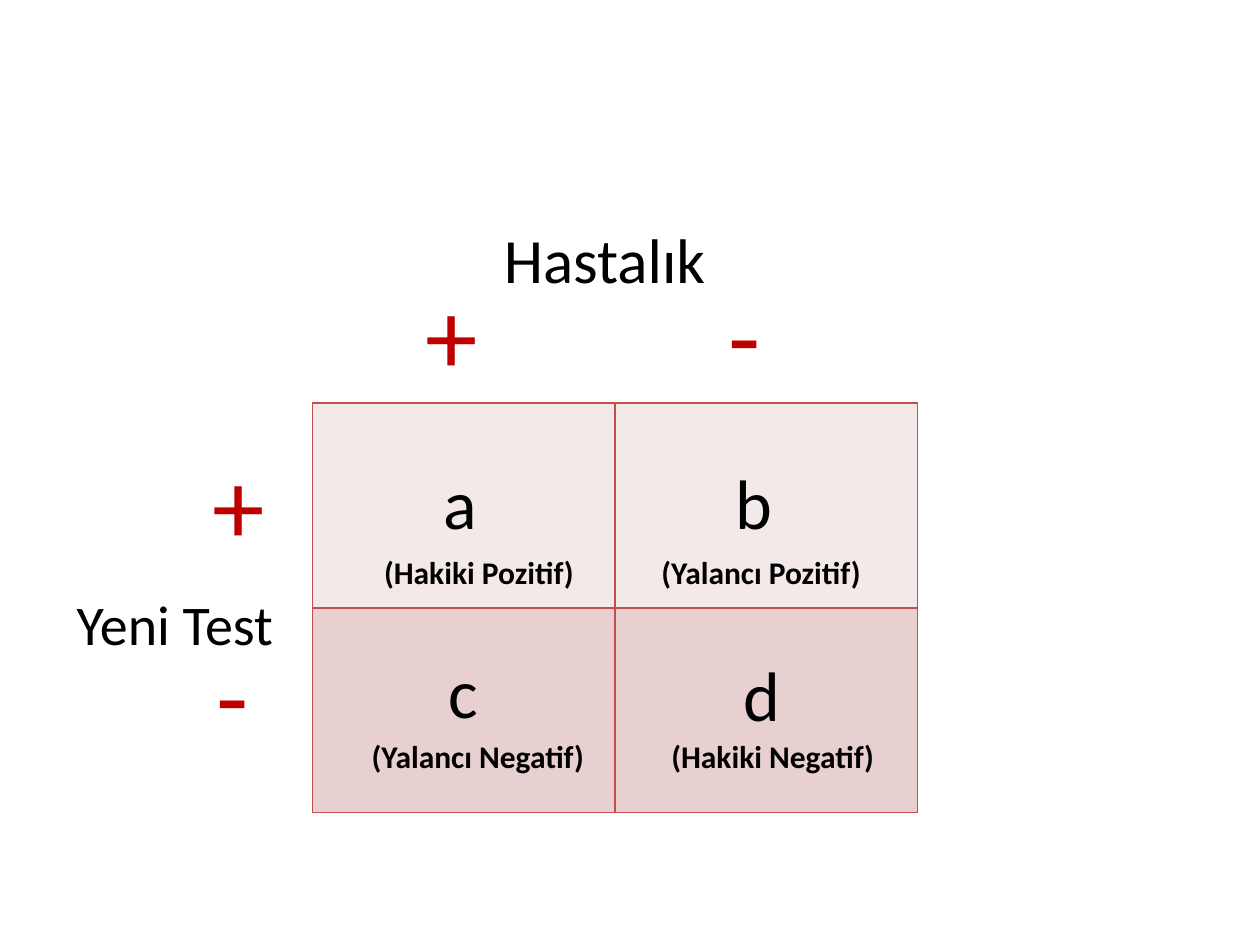
from dataclasses import dataclass

from lxml import etree
from pptx import Presentation
from pptx import util as u
from pptx.dml.color import RGBColor
from pptx.enum import text
from pptx.oxml import ns

COLS, ROWS = 100, 75
SLIDE_W, SLIDE_H = u.Inches(10), u.Inches(7.5)


@dataclass(frozen=True)
class Theme:
    font: str = "Calibri"
    ink: str = "000000"
    sign: str = "C00000"
    border: str = "C0504D"
    border_pt: float = 1
    row_fills: tuple = ("F4E9E9", "E8D0D0")
    disease_pt: int = 36
    test_pt: int = 32
    sign_pt: int = 60
    letter_pt: int = 40
    outcome_pt: int = 18


THEME = Theme()


def grid(col, row, width, height):
    x, y = SLIDE_W / COLS, SLIDE_H / ROWS
    return [u.Emu(round(n)) for n in (col * x, row * y, width * x, height * y)]


def apply(obj, values):
    for name, value in values.items():
        setattr(obj, name, value)


def add_label(s, words, at, size, color=THEME.ink, bold=False, wrap=False):
    tf = s.shapes.add_textbox(*grid(*at)).text_frame
    apply(tf, {"word_wrap": wrap,
               "auto_size": text.MSO_AUTO_SIZE.SHAPE_TO_FIT_TEXT})
    r = tf.paragraphs[0].add_run()
    r.text = words
    apply(r.font, {"name": THEME.font, "size": u.Pt(size), "bold": bold})
    r.font.color.rgb = RGBColor.from_string(color)


def add_borders(cell):
    pr = cell._tc.get_or_add_tcPr()
    for i, side in enumerate(("lnL", "lnR", "lnT", "lnB")):
        ln = etree.Element(ns.qn(f"a:{side}"), w=str(u.Pt(THEME.border_pt)))
        fill = etree.SubElement(ln, ns.qn("a:solidFill"))
        etree.SubElement(fill, ns.qn("a:srgbClr"), val=THEME.border)
        pr.insert(i, ln)


def add_outcome_table(s, at):
    table = s.shapes.add_table(2, 2, *grid(*at)).table
    apply(table, {"first_row": False, "horz_banding": False})
    for row, color in zip(table.rows, THEME.row_fills):
        for cell in row.cells:
            cell.fill.solid()
            cell.fill.fore_color.rgb = RGBColor.from_string(color)
            add_borders(cell)


def add_signs(s):
    for sign, width, places in (
        ("+", 6.2, ((32.8, 20.9), (15.9, 34.4))),
        ("-", 4.6, ((56.8, 20.9), (16.2, 49.5))),
    ):
        for col, row in places:
            add_label(s, sign, (col, row, width, 11.1),
                      THEME.sign_pt, THEME.sign)


def add_outcomes(s):
    for letter, at, wrap in (
        ("a", (34.2, 36, 3.1, 7.7), True),
        ("b", (57.4, 36, 5, 7.7), False),
        ("c", (34.6, 51, 4.4, 7.7), False),
        ("d", (58, 51.2, 5, 7.7), False),
    ):
        add_label(s, letter, at, THEME.letter_pt, wrap=wrap)
    for outcome, col, row, width in (
        ("(Hakiki Pozitif)", 29.5, 43.4, 17.2),
        ("(Yalancı Pozitif)", 51.5, 43.4, 18),
        ("(Yalancı Negatif)", 28.5, 58, 19.1),
        ("(Hakiki Negatif)", 52.3, 58, 18.3),
    ):
        add_label(s, outcome, (col, row, width, 4), THEME.outcome_pt, bold=True)


def main():
    prs = Presentation()
    apply(prs, {"slide_width": SLIDE_W, "slide_height": SLIDE_H})
    s = prs.slides.add_slide(prs.slide_layouts[6])
    add_outcome_table(s, (24.8, 32, 48, 32.5))
    add_label(s, "Hastalık", (39, 17, 18.2, 7.1), THEME.disease_pt)
    add_label(s, "Yeni Test", (5.1, 46.3, 17.8, 6.4), THEME.test_pt)
    add_signs(s)
    add_outcomes(s)
    prs.save("out.pptx")


if __name__ == "__main__":
    main()
